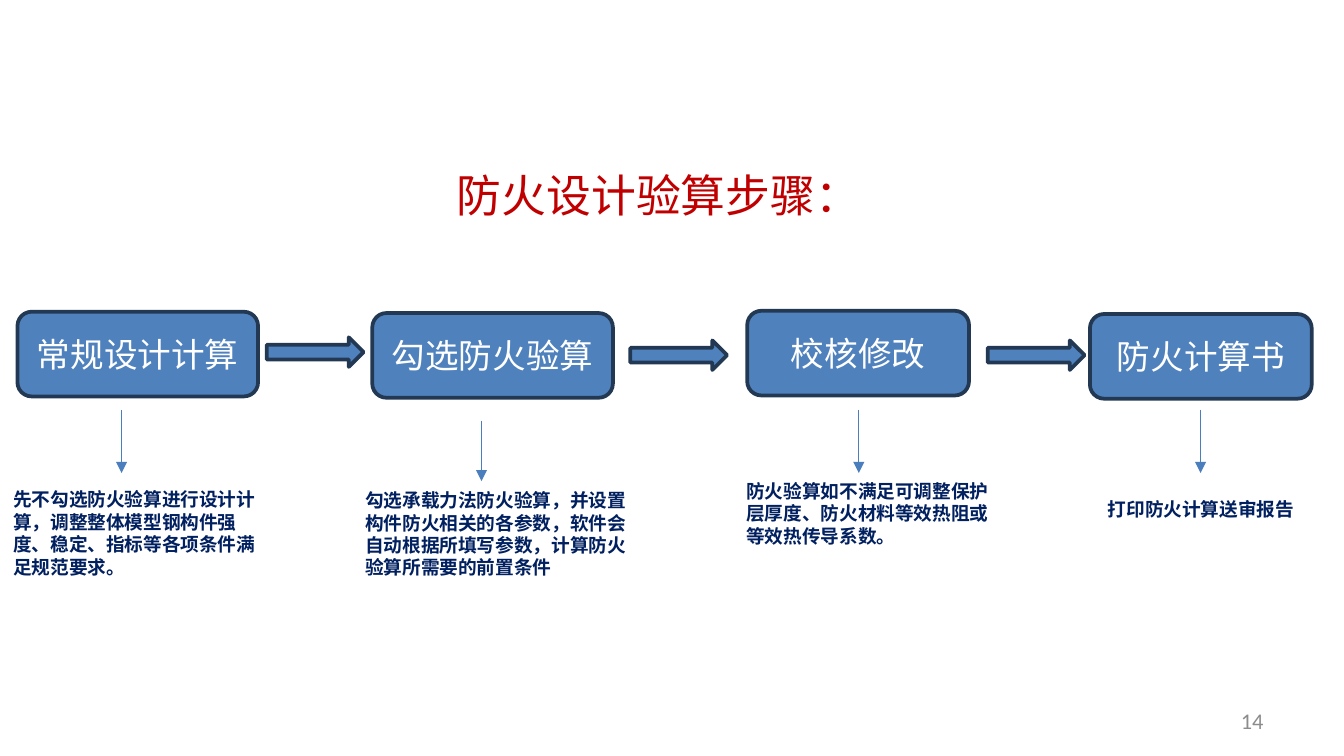
from collections import namedtuple

from lxml.etree import SubElement
from pptx import Presentation
from pptx.dml.color import RGBColor
from pptx.enum.shapes import MSO_CONNECTOR, MSO_SHAPE
from pptx.enum.text import MSO_ANCHOR, MSO_AUTO_SIZE, PP_ALIGN
from pptx.oxml.ns import qn
from pptx.util import Inches, Pt

SLIDE_WIDTH = Inches(10)
SLIDE_HEIGHT = SLIDE_WIDTH * 9 // 16
COLUMN = ROW = SLIDE_WIDTH / 100

RED = RGBColor(0xC0, 0x00, 0x00)
BLUE = RGBColor(0x4F, 0x81, 0xBD)
OUTLINE = RGBColor(0x23, 0x39, 0x53)
POINTER = RGBColor(0x4B, 0x7E, 0xBC)
NAVY = RGBColor(0x00, 0x20, 0x60)
GRAY = RGBColor(0x8C, 0x8C, 0x8C)
WHITE = RGBColor(0xFF, 0xFF, 0xFF)
LATIN, CHINESE = "Calibri", "Noto Sans CJK SC"

Box = namedtuple("Box", "left top width height")
Step = namedtuple("Step", "label card pointer note_box note align")

CARD_HEIGHT = 6.3
STEPS = [
    Step("常规设计计算", Box(1.3, 23.2, 17.9, CARD_HEIGHT), Box(9.05, 30.5, 0, 4.7),
         Box(0, 35.85, 20.9, 7.7),
         "先不勾选防火验算进行设计计算，调整整体模型钢构件强度、稳定、指标等各项条件满足规范要求。",
         PP_ALIGN.LEFT),
    Step("勾选防火验算", Box(27.7, 23.3, 17.9, CARD_HEIGHT), Box(35.83, 31.3, 0, 4.5),
         Box(26.2, 35.9, 21.9, 7.7),
         "勾选承载力法防火验算，并设置构件防火相关的各参数，软件会自动根据所填写参数，计算防火验算所需要的前置条件",
         PP_ALIGN.LEFT),
    Step("校核修改", Box(55.6, 23.13, 16.5, CARD_HEIGHT), Box(63.9, 30.5, 0, 4.7),
         Box(54.55, 35.2, 20.9, 6.1),
         "防火验算如不满足可调整保护层厚度、防火材料等效热阻或等效热传导系数。",
         PP_ALIGN.LEFT),
    Step("防火计算书", Box(81.1, 23.37, 16.5, CARD_HEIGHT), Box(89.33, 30.5, 0, 4.7),
         Box(78.4, 36.55, 21.9, 2.7),
         "打印防火计算送审报告", PP_ALIGN.CENTER),
]
ARROWS = [Box(19.85, 25.1, 7.2, 2.2), Box(46.9, 25.33, 7.2, 2.2), Box(73.5, 25.33, 7.2, 2.2)]


def place(box):
    """Turn a box in columns and rows into slide lengths."""
    return (round(box.left * COLUMN), round(box.top * ROW),
            round(box.width * COLUMN), round(box.height * ROW))


def write(frame, text, size, color, font, align, anchor=MSO_ANCHOR.MIDDLE, bold=False):
    """Write one formatted run into a text frame and return its paragraph."""
    frame.word_wrap = True
    frame.auto_size = MSO_AUTO_SIZE.NONE
    frame.vertical_anchor = anchor
    paragraph = frame.paragraphs[0]
    paragraph.alignment = align
    run = paragraph.add_run()
    run.text = text
    run.font.size = Pt(size)
    run.font.bold = bold
    run.font.color.rgb = color
    run.font.name = font
    SubElement(run.font._element, qn("a:ea"), typeface=CHINESE)
    return paragraph


def add_block(slide, preset, box):
    """Add a blue outlined preset shape."""
    block = slide.shapes.add_shape(preset, *place(box))
    block.shadow.inherit = False
    block.fill.solid()
    block.fill.fore_color.rgb = BLUE
    block.line.color.rgb = OUTLINE
    block.line.width = Pt(2)
    return block


def add_pointer(slide, box):
    """Add a thin arrow running down the given box."""
    left, top, width, height = place(box)
    pointer = slide.shapes.add_connector(
        MSO_CONNECTOR.STRAIGHT, left, top, left + width, top + height)
    pointer.line.color.rgb = POINTER
    pointer.line.width = Pt(0.75)
    SubElement(pointer.line._get_or_add_ln(), qn("a:tailEnd"), type="triangle")
    SubElement(pointer._element.spPr, qn("a:effectLst"))


def add_step(slide, step):
    """Add a step card, its pointer and its note."""
    card = add_block(slide, MSO_SHAPE.ROUNDED_RECTANGLE, step.card)
    write(card.text_frame, step.label, 18, WHITE, LATIN, PP_ALIGN.CENTER)
    add_pointer(slide, step.pointer)
    note = slide.shapes.add_textbox(*place(step.note_box))
    paragraph = write(note.text_frame, step.note, 10, NAVY, CHINESE, step.align,
                      MSO_ANCHOR.TOP, bold=True)
    paragraph.line_spacing = Pt(12)
    paragraph._p.get_or_add_pPr().set("hangingPunct", "0")


def add_title(slide, box):
    """Move the title placeholder into the box and fill it."""
    title = slide.shapes.title
    title.left, title.top, title.width, title.height = place(box)
    write(title.text_frame, "防火设计验算步骤：", 24, RED, CHINESE, PP_ALIGN.LEFT)


def add_page_number(slide, box):
    """Add the page number at the right of the box."""
    number = slide.shapes.add_textbox(*place(box))
    write(number.text_frame, "14", 12, GRAY, LATIN, PP_ALIGN.RIGHT)


def main():
    """Build the slide and save it."""
    presentation = Presentation()
    presentation.slide_width, presentation.slide_height = SLIDE_WIDTH, SLIDE_HEIGHT
    slide = presentation.slides.add_slide(presentation.slide_layouts[5])
    add_title(slide, Box(33, 11.6, 40.2, 5.8))
    for step in STEPS:
        add_step(slide, step)
    for arrow in ARROWS:
        add_block(slide, MSO_SHAPE.RIGHT_ARROW, arrow)
    add_page_number(slide, Box(71.7, 52.13, 23.3, 3))
    presentation.save("out.pptx")


if __name__ == "__main__":
    main()
